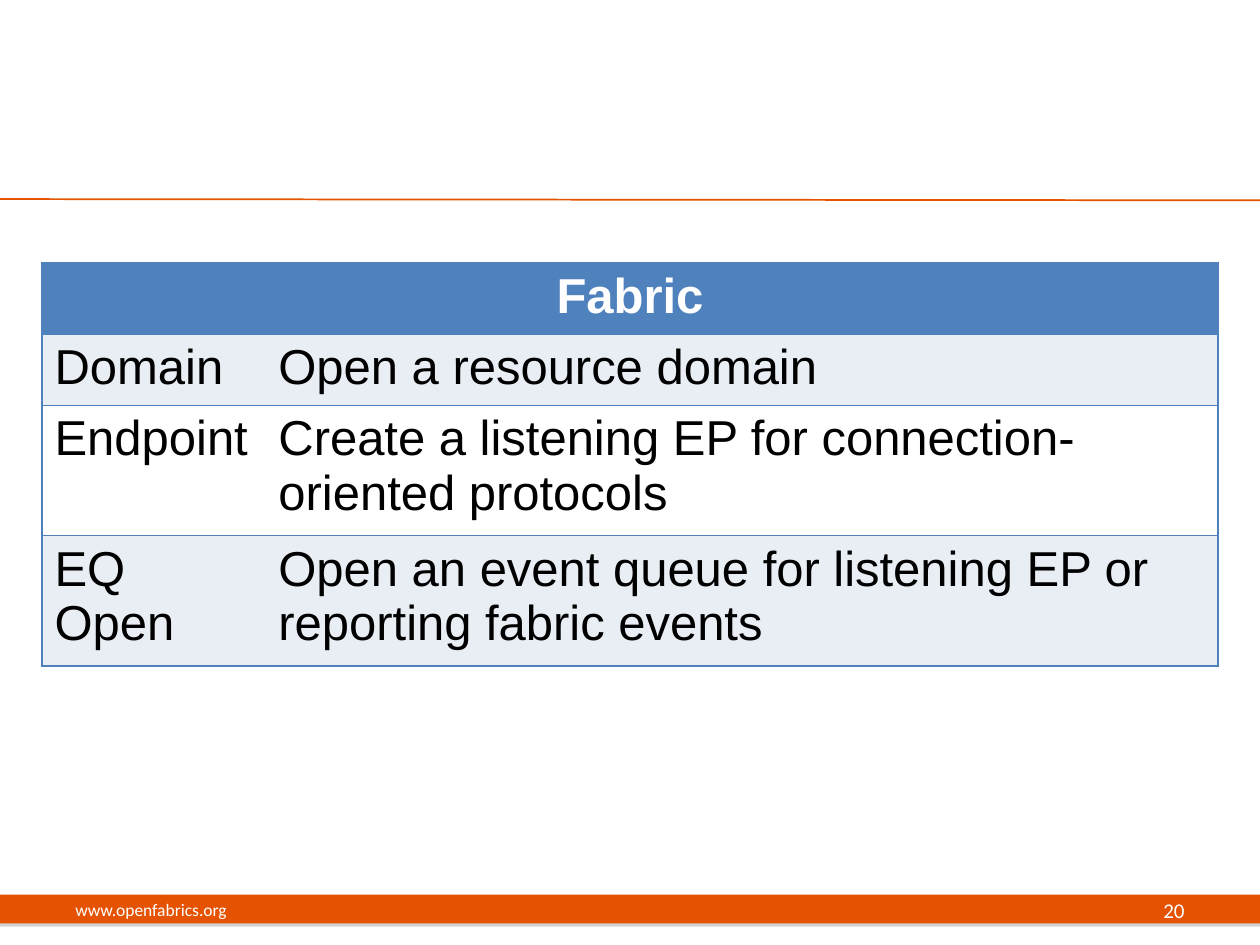
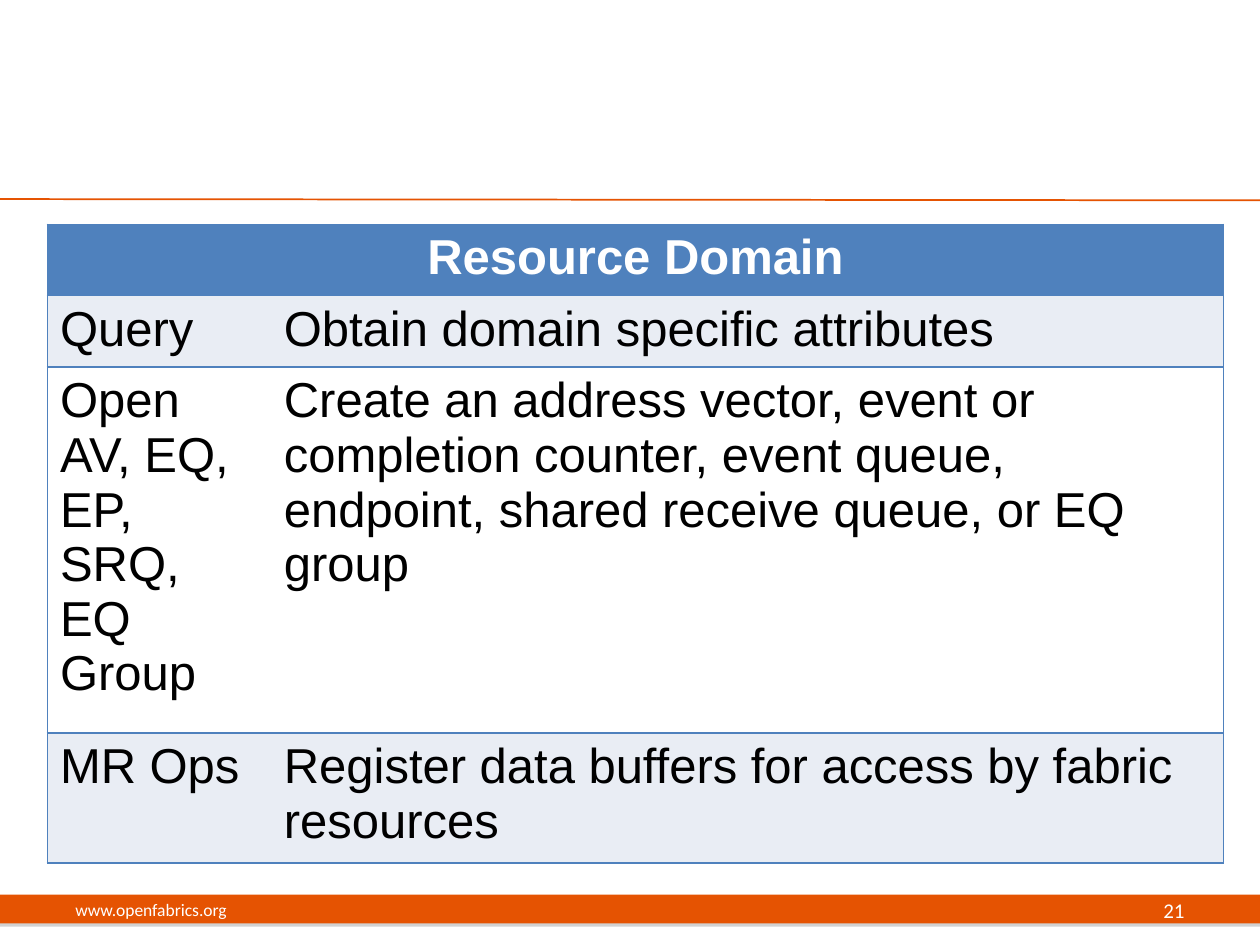
from pptx import Presentation
from pptx.dml.color import RGBColor
from pptx.enum.shapes import MSO_CONNECTOR, MSO_SHAPE
from pptx.enum.text import MSO_ANCHOR, PP_ALIGN
from pptx.oxml import parse_xml
from pptx.oxml.ns import nsdecls, qn
from pptx.util import Inches, Pt

LEFT, CENTER, RIGHT = PP_ALIGN.LEFT, PP_ALIGN.CENTER, PP_ALIGN.RIGHT
MIDDLE = MSO_ANCHOR.MIDDLE
RECTANGLE = MSO_SHAPE.RECTANGLE
STRAIGHT = MSO_CONNECTOR.STRAIGHT

WHITE, BLACK = "FFFFFF", "000000"
ORANGE, BLUE, PALE_BLUE, GREY = "E55302", "4F81BD", "E9EDF4", "808080"
BODY_FONT, FOOTER_FONT = "Arial", "Calibri"

GRID = 30  # columns and rows on a slide
TABLE_COLUMNS = (5.33, 22.67)
CELL_PADDING, LINE_HEIGHT = 0.4, 1.73

# Each table row: operation, description, number of text lines
FABRIC = [
    ("Domain", "Open a resource domain", 1),
    ("Endpoint", "Create a listening EP for connection-oriented protocols", 2),
    ("EQ Open", "Open an event queue for listening EP or reporting fabric events", 2),
]
RESOURCE_DOMAIN = [
    ("Query", "Obtain domain specific attributes", 1),
    ("Open AV, EQ, EP, SRQ, EQ Group",
     "Create an address vector, event or completion counter, event queue, "
     "endpoint, shared receive queue, or EQ group", 6),
    ("MR Ops", "Register data buffers for access by fabric resources", 2),
]


def colour(value):
    return RGBColor.from_string(value)


class SlideBuilder:
    """Holds the deck's style and the slide being built."""

    def __init__(self):
        self.deck = Presentation()
        self.deck.slide_width, self.deck.slide_height = Inches(10), Inches(7.5)
        self.page = None

    def across(self, columns):
        return round(self.deck.slide_width * columns / GRID)

    def down(self, rows):
        return round(self.deck.slide_height * rows / GRID)

    def area(self, left, top, width, height):
        return (self.across(left), self.down(top),
                self.across(width), self.down(height))

    def new_page(self, number):
        self.page = self.deck.slides.add_slide(self.deck.slide_layouts[6])
        fill = self.page.background.fill
        fill.solid()
        fill.fore_color.rgb = colour(WHITE)
        self.band(28.4, 0.92)
        self.rule(6.32, 6.36)
        self.label("www.openfabrics.org", 1.5, 9.5, 10, LEFT)
        self.label(str(number), 21.5, 7, 12, RIGHT)

    def band(self, top, height):
        """Full-width footer band with a soft shadow below it."""
        band = self.page.shapes.add_shape(RECTANGLE, *self.area(0, top, GRID, height))
        band.fill.solid()
        band.fill.fore_color.rgb = colour(ORANGE)
        band.line.fill.background()
        band.shadow.inherit = False
        band._element.spPr.find(qn("a:effectLst")).append(parse_xml(
            f'<a:outerShdw {nsdecls("a")} dist="{Pt(1.8)}" dir="5400000" rotWithShape="0">'
            f'<a:srgbClr val="{GREY}"><a:alpha val="35000"/></a:srgbClr></a:outerShdw>'))

    def rule(self, start, end):
        line = self.page.shapes.add_connector(
            STRAIGHT, 0, self.down(start), self.across(GRID), self.down(end))
        line.line.color.rgb = colour(ORANGE)
        line.line.width = Pt(1)
        line._element.spPr.append(parse_xml(f'<a:effectLst {nsdecls("a")}/>'))

    def label(self, text, left, width, size, align):
        box = self.page.shapes.add_textbox(*self.area(left, 28.08, width, 1.6))
        frame = box.text_frame
        frame.word_wrap = True
        frame.vertical_anchor = MIDDLE
        self.add_text(frame, text, size, FOOTER_FONT, WHITE, align)

    def add_text(self, frame, text, size, font, ink, align=LEFT, bold=False):
        para = frame.paragraphs[0]
        para.alignment = align
        span = para.add_run()
        span.text = text
        span.font.size, span.font.name, span.font.bold = Pt(size), font, bold
        span.font.color.rgb = colour(ink)

    def cell(self, cell, text, fill, ink, edges, **style):
        """Fill a cell and draw a line on the named edges (L, R, T, B)."""
        properties = cell._tc.get_or_add_tcPr()
        for edge in "LRTB":
            paint = (f'<a:solidFill><a:srgbClr val="{BLUE}"/></a:solidFill>'
                     if edge in edges else "<a:noFill/>")
            properties.append(parse_xml(
                f'<a:ln{edge} {nsdecls("a")} w="{Pt(1)}">{paint}</a:ln{edge}>'))
        cell.fill.solid()
        cell.fill.fore_color.rgb = colour(fill)
        if text:
            self.add_text(cell.text_frame, text, 28, BODY_FONT, ink, **style)

    def operations_table(self, heading, operations, left, top):
        heights = [CELL_PADDING + LINE_HEIGHT * lines
                   for lines in (1, *(row[2] for row in operations))]
        table = self.page.shapes.add_table(
            len(heights), len(TABLE_COLUMNS),
            *self.area(left, top, sum(TABLE_COLUMNS), sum(heights))).table
        for column, width in zip(table.columns, TABLE_COLUMNS):
            column.width = self.across(width)
        for row, height in zip(table.rows, heights):
            row.height = self.down(height)

        first, last = table.cell(0, 0), table.cell(0, 1)
        first.merge(last)
        self.cell(first, heading, BLUE, WHITE, "LRTB", align=CENTER, bold=True)
        self.cell(last, "", BLUE, WHITE, "RTB")
        for index, (name, description, _) in enumerate(operations, 1):
            fill = PALE_BLUE if index % 2 else WHITE
            self.cell(table.cell(index, 0), name, fill, BLACK, "LTB")
            self.cell(table.cell(index, 1), description, fill, BLACK, "RTB")


def main():
    builder = SlideBuilder()
    builder.new_page(20)
    builder.operations_table("Fabric", FABRIC, 1, 8.33)
    builder.new_page(21)
    builder.operations_table("Resource Domain", RESOURCE_DOMAIN, 1.13, 7.12)
    builder.deck.save("out.pptx")


if __name__ == "__main__":
    main()
